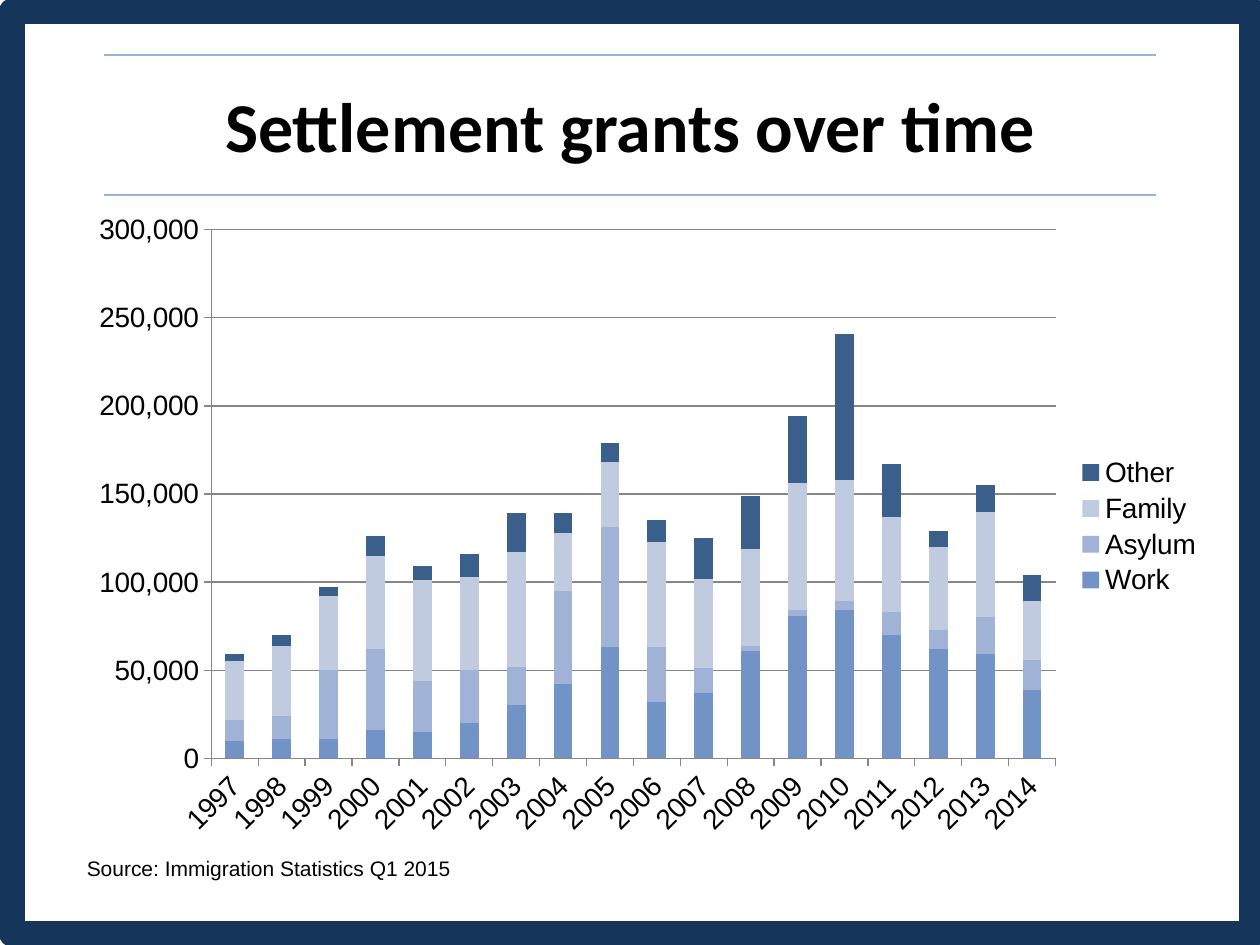
"""Build the slide showing settlement grants by category over time."""
from lxml import etree
from pptx import Presentation
from pptx import util as u
from pptx.chart.data import CategoryChartData
from pptx.dml.color import RGBColor
from pptx.enum import chart as charts, shapes, text
from pptx.oxml import parse_xml
from pptx.oxml.ns import nsdecls, qn

BLACK = RGBColor(0x00, 0x00, 0x00)
NAVY = RGBColor(0x16, 0x35, 0x5A)
RULE_BLUE = RGBColor(0x95, 0xB3, 0xD7)
AXIS_GREY = RGBColor(0x86, 0x86, 0x86)
WORK_BLUE = RGBColor(0x72, 0x93, 0xC6)
ASYLUM_BLUE = RGBColor(0xA0, 0xB2, 0xD5)
FAMILY_BLUE = RGBColor(0xC1, 0xCB, 0xE0)
OTHER_BLUE = RGBColor(0x3A, 0x5F, 0x8B)

YEARS = range(1997, 2015)
GRANTS_THOUSANDS = {
    "Work": (WORK_BLUE, [10, 11, 11, 16, 15, 20, 30, 42, 63, 32, 37, 61, 81, 84, 70, 62, 59, 39]),
    "Asylum": (ASYLUM_BLUE, [12, 13, 39, 46, 29, 30, 22, 53, 68, 31, 14, 3, 3, 5, 13, 11, 21, 17]),
    "Family": (FAMILY_BLUE, [33, 40, 42, 53, 57, 53, 65, 33, 37, 60, 51, 55, 72, 69, 54, 47, 60, 33]),
    "Other": (OTHER_BLUE, [4, 6, 5, 11, 8, 13, 22, 11, 11, 12, 23, 30, 38, 83, 30, 9, 15, 15]),
}


def style_font(font, name, size, bold=False):
    """Apply the typeface, size and black colour to a font."""
    font.name, font.size, font.bold = name, u.Pt(size), bold
    font.color.rgb = BLACK


def add_frame(slide):
    """Draw the thick navy border around the slide."""
    frame = slide.shapes.add_shape(
        shapes.MSO_SHAPE.RECTANGLE, u.Cm(0.25), u.Cm(0.23), u.Cm(25), u.Cm(18.6))
    frame.shadow.inherit = False
    frame.fill.background()
    frame.line.color.rgb = NAVY
    frame.line.width = u.Pt(15)


def add_rule(slide, y):
    """Draw one horizontal rule beside the title."""
    rule = slide.shapes.add_connector(
        shapes.MSO_CONNECTOR.STRAIGHT, u.Cm(2.1), y, u.Cm(23.3), y)
    rule.line.color.rgb = RULE_BLUE
    rule.line.width = u.Pt(1.5)
    etree.SubElement(rule._element.spPr, qn("a:effectLst"))


def set_title(slide, wording):
    """Place and format the title placeholder."""
    title = slide.shapes.title
    title.left, title.top, title.width, title.height = (
        u.Cm(1.27), u.Cm(1.11), u.Cm(22.86), u.Cm(2.82))
    title.text_frame.vertical_anchor = text.MSO_ANCHOR.MIDDLE
    heading = title.text_frame.paragraphs[0]
    heading.alignment = text.PP_ALIGN.CENTER
    run = heading.add_run()
    run.text = wording
    style_font(run.font, "Calibri", 40, bold=True)


def add_source(slide, wording):
    """Add the source note under the chart."""
    source = slide.shapes.add_textbox(u.Cm(1.5), u.Cm(17.12), u.Cm(22.8), u.Cm(0.78))
    source.text_frame.word_wrap = True
    run = source.text_frame.paragraphs[0].add_run()
    run.text = wording
    style_font(run.font, "Arial", 12)


def style_axis(axis):
    """Give an axis its grey line and outward ticks."""
    axis.format.line.color.rgb = AXIS_GREY
    axis.format.line.width = u.Pt(0.75)
    axis.major_tick_mark = charts.XL_TICK_MARK.OUTSIDE
    axis.minor_tick_mark = charts.XL_TICK_MARK.NONE
    style_font(axis.tick_labels.font, "Arial", 16)


def set_plot_area(chart, x, y, w, h):
    """Fix the inner plot area as fractions of the chart."""
    area = chart._chartSpace.chart.plotArea
    for layout in area.findall(qn("c:layout")):
        area.remove(layout)
    sizes = "".join(f'<c:{key} val="{value}"/>' for key, value in
                    (("x", x), ("y", y), ("w", w), ("h", h)))
    area.insert(0, parse_xml(
        f'<c:layout {nsdecls("c")}><c:manualLayout><c:layoutTarget val="inner"/>'
        f'<c:xMode val="edge"/><c:yMode val="edge"/>{sizes}</c:manualLayout></c:layout>'))


def add_grants_chart(slide):
    """Add the stacked columns of grants by year."""
    grants = CategoryChartData(number_format="#,##0")
    grants.categories = [str(year) for year in YEARS]
    for name, (_, thousands) in GRANTS_THOUSANDS.items():
        grants.add_series(name, [value * 1000 for value in thousands])
    chart = slide.shapes.add_chart(
        charts.XL_CHART_TYPE.COLUMN_STACKED, u.Cm(1.5), u.Cm(4.11),
        u.Cm(23), u.Cm(13), grants).chart
    style_font(chart.font, "Arial", 16)
    chart.has_title = False
    chart.has_legend = True
    chart.legend.position = charts.XL_LEGEND_POSITION.RIGHT
    chart.legend.include_in_layout = False
    style_font(chart.legend.font, "Arial", 16)

    plot = chart.plots[0]
    plot.gap_width, plot.overlap, plot.vary_by_categories = 150, 100, False
    for series, (color, _) in zip(plot.series, GRANTS_THOUSANDS.values()):
        series.format.fill.solid()
        series.format.fill.fore_color.rgb = color

    years, amounts = chart.category_axis, chart.value_axis
    for axis in (years, amounts):
        style_axis(axis)
    years._element.find(qn("c:txPr")).find(qn("a:bodyPr")).set("rot", "-2700000")
    amounts.minimum_scale, amounts.maximum_scale, amounts.major_unit = 0, 300000, 50000
    amounts.tick_labels.number_format = "#,##0"
    amounts.tick_labels.number_format_is_linked = False
    amounts.has_major_gridlines = True
    amounts.major_gridlines.format.line.color.rgb = AXIS_GREY
    amounts.major_gridlines.format.line.width = u.Pt(0.75)
    set_plot_area(chart, 0.12, 0.04, 0.74, 0.82)


def main():
    """Assemble and save the slide."""
    deck = Presentation()
    deck.slide_width, deck.slide_height = u.Cm(25.4), u.Cm(19.05)
    slide = deck.slides.add_slide(deck.slide_layouts[5])
    add_frame(slide)
    for y in (u.Cm(3.93), u.Cm(1.11)):
        add_rule(slide, y)
    set_title(slide, "Settlement grants over time")
    add_source(slide, "Source: Immigration Statistics Q1 2015")
    add_grants_chart(slide)
    deck.save("out.pptx")


if __name__ == "__main__":
    main()
